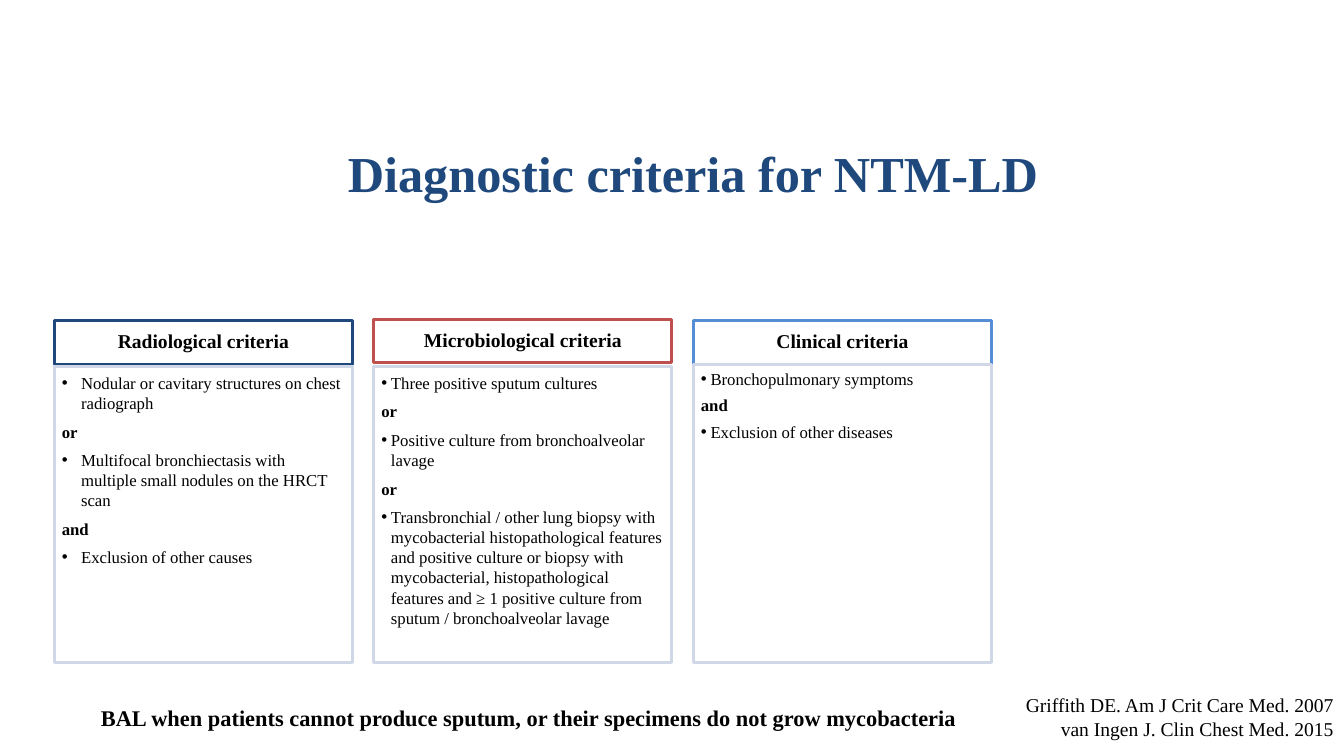
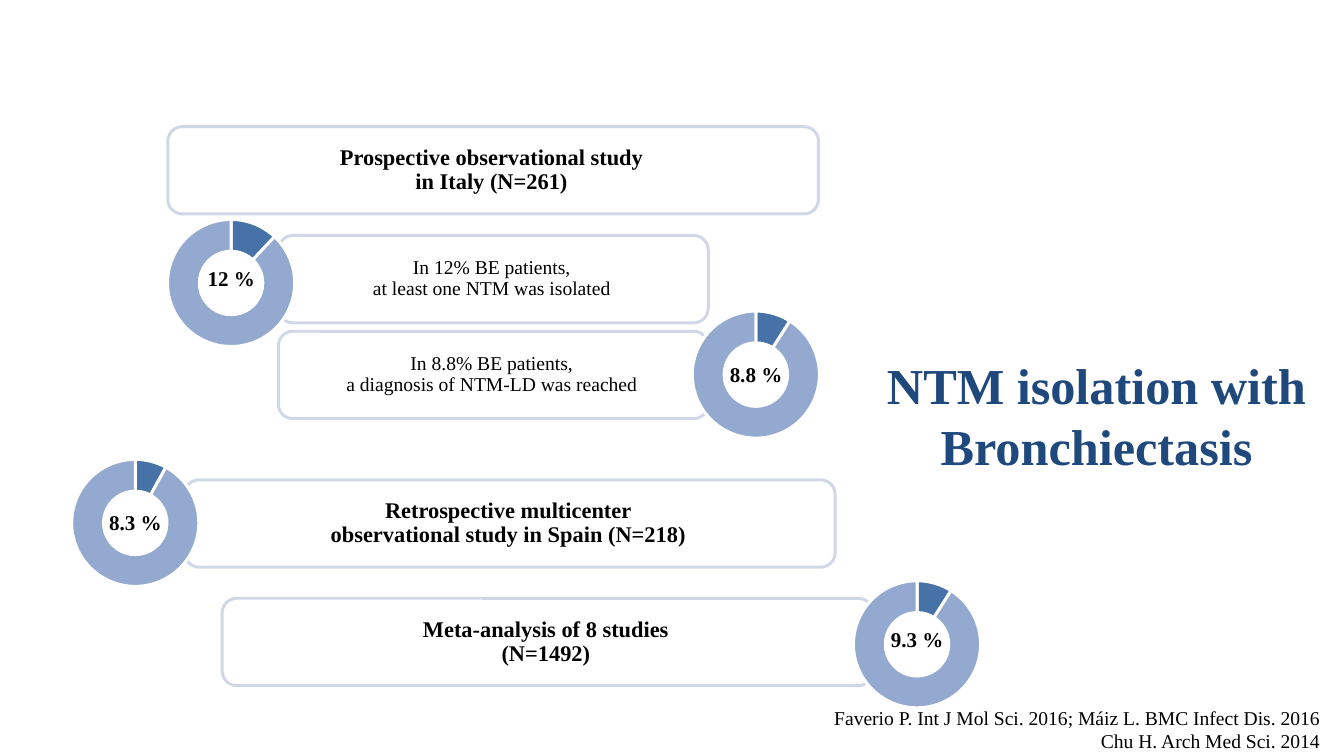
from lxml import etree
from pptx import Presentation
from pptx import util as u
from pptx.chart.data import CategoryChartData
from pptx.dml.color import RGBColor
from pptx.enum import chart as charts, shapes, text
from pptx.oxml import parse_xml
from pptx.oxml.ns import nsdecls, qn

# Shared look
NAVY = RGBColor(0x1F, 0x49, 0x7D)
RED = RGBColor(0xC0, 0x50, 0x4D)
SKY = RGBColor(0x55, 0x8E, 0xD5)
PALE = RGBColor(0xD0, 0xD8, 0xE8)
RING_DARK = RGBColor(0x46, 0x72, 0xA8)
RING_LIGHT = RGBColor(0x93, 0xA9, 0xCF)
BLACK = RGBColor(0, 0, 0)
WHITE = RGBColor(255, 255, 255)
FONT = "Times New Roman"
CENTER, RIGHT, LEFT = text.PP_ALIGN.CENTER, text.PP_ALIGN.RIGHT, text.PP_ALIGN.LEFT
TOP, MIDDLE, BOTTOM = text.MSO_ANCHOR.TOP, text.MSO_ANCHOR.MIDDLE, text.MSO_ANCHOR.BOTTOM
JOINERS = ("or", "and")


def write(box, lines, size, align=CENTER, anchor=MIDDLE, bold=False, color=BLACK,
          spacing=None, after=None, margins=None, indent=None):
    """Fill a box with paragraphs; an indent turns all but the joiners into bullets."""
    frame = box.text_frame
    frame.text = "\n".join(lines)
    settings = {"word_wrap": True, "auto_size": text.MSO_AUTO_SIZE.NONE,
                "vertical_anchor": anchor}
    if margins:
        sides = ("margin_left", "margin_top", "margin_right", "margin_bottom")
        settings.update(zip(sides, map(u.Pt, margins)))
    for name, value in settings.items():
        setattr(frame, name, value)
    for para in frame.paragraphs:
        joiner = indent is not None and para.text in JOINERS
        para.alignment = align
        if spacing:
            para.line_spacing = spacing
        if after:
            para.space_after = u.Pt(after)
        if indent and not joiner:
            props = para._p.get_or_add_pPr()
            props.set("marL", str(u.Pt(indent)))
            props.set("indent", str(-u.Pt(indent)))
            etree.SubElement(props, qn("a:buFont")).set("typeface", "Arial")
            etree.SubElement(props, qn("a:buChar")).set("char", "•")
        look = {"name": FONT, "size": u.Pt(size), "bold": bold or joiner}
        for span in para.runs:
            for name, value in look.items():
                setattr(span.font, name, value)
            span.font.color.rgb = color


def add_box(page, kind, place, line):
    box = page.shapes.add_shape(kind, *map(u.Pt, place))
    box.shadow.inherit = False
    box.fill.background()
    box.line.color.rgb = line
    box.line.width = u.Pt(2)
    return box


deck = Presentation()
deck.slide_width, deck.slide_height = u.Pt(907.2), u.Pt(510.5)

# Titles of both slides: place as left, top, width, height
titles = [
    ("Diagnostic criteria for NTM-LD", (150, 86.4, 635.8, 54)),
    ("NTM isolation with Bronchiectasis", (574.6, 229.7, 331.2, 95)),
]
pages = []
for title, place in titles:
    page = deck.slides.add_slide(deck.slide_layouts[5])
    heading = page.shapes.title
    for name, value in zip(("left", "top", "width", "height"), place):
        setattr(heading, name, u.Pt(value))
    write(heading, [title], 34, anchor=BOTTOM, bold=True, color=NAVY)
    pages.append(page)
criteria_page, studies_page = pages

# Slide 1: three columns of criteria
COLUMN_LEFT, COLUMN_STEP, COLUMN_WIDTH, COLUMN_BOTTOM = 36.7, 215.7, 201, 447.5
columns = [
    ("Radiological criteria", NAVY, 216.3, 247.3, 13, None, [
        "Nodular or cavitary structures on chest radiograph",
        "or",
        "Multifocal bronchiectasis with multiple small nodules on the HRCT scan",
        "and",
        "Exclusion of other causes"]),
    ("Microbiological criteria", RED, 215.5, 247.3, 6.5, None, [
        "Three positive sputum cultures",
        "or",
        "Positive culture from bronchoalveolar lavage",
        "or",
        "Transbronchial / other lung biopsy with mycobacterial histopathological "
        "features and positive culture or biopsy with mycobacterial, "
        "histopathological features and ≥ 1 positive culture from sputum / "
        "bronchoalveolar lavage"]),
    ("Clinical criteria", SKY, 216.3, 246.2, 6.5, 0.9, [
        "Bronchopulmonary symptoms",
        "and",
        "Exclusion of other diseases"]),
]
RECTANGLE = shapes.MSO_SHAPE.RECTANGLE
for index, (name, accent, top, body_top, indent, spacing, items) in enumerate(columns):
    left = COLUMN_LEFT + index * COLUMN_STEP
    header = add_box(criteria_page, RECTANGLE, (left, top, COLUMN_WIDTH, 29.6), accent)
    write(header, [name], 13.2, bold=True, spacing=0.9, margins=(5, 3, 5, 3))
    body = add_box(criteria_page, RECTANGLE,
                   (left, body_top, COLUMN_WIDTH, COLUMN_BOTTOM - body_top), PALE)
    write(body, items, 11.3, align=LEFT, anchor=TOP, spacing=spacing, after=5.7,
          margins=(5, 4.3, 5, 6), indent=indent)

# Slide 1: closing remark
remark = criteria_page.shapes.add_textbox(*map(u.Pt, (43.2, 470.5, 627, 28)))
write(remark, ["BAL when patients cannot produce sputum, or their specimens "
               "do not grow mycobacteria"], 15.1, bold=True)

# Slide 2: study boxes (left, top, width, is a main study, text)
studies = [
    (113.3, 85.5, 439.2, True, "Prospective observational study\vin Italy (N=261)"),
    (187.9, 159, 290.2, False, "In 12% BE patients,\vat least one NTM was isolated"),
    (187.9, 223.7, 290.2, False, "In 8.8% BE patients,\va diagnosis of NTM-LD was reached"),
    (124.6, 324, 439.2, True,
     "Retrospective multicenter\vobservational study in Spain (N=218)"),
    (150, 404, 439.2, True, "Meta-analysis of 8\u00a0studies\v(N=1492)"),
]
for left, top, width, main, wording in studies:
    study = add_box(studies_page, shapes.MSO_SHAPE.ROUNDED_RECTANGLE,
                    (left, top, width, 59), PALE)
    write(study, [wording], 15.1 if main else 13.2, bold=main, spacing=0.9,
          margins=(3.6, 3.6, 5.8, 3.6))

# Slide 2: rings with their share (left, top, label shift, value, label)
RING_WIDTH, RING_HEIGHT = 153, 107.3
LABEL_WIDTH, LABEL_HEIGHT = 85, 37
PLOT_HEIGHT = 0.8
PLOT_WIDTH = PLOT_HEIGHT * RING_HEIGHT / RING_WIDTH
rings = [
    (79.6, 137.5, -2, 12, "12\u00a0%"),
    (433.8, 199.4, 0.5, 9, "8.8\u00a0%"),
    (14.9, 299.5, 0.5, 8, "8.3\u00a0%"),
    (542.6, 381.5, -2.5, 9, "9.3\u00a0%"),
]
for left, top, shift, value, wording in rings:
    data = CategoryChartData()
    data.categories = ["1", "2"]
    data.add_series("Series 1", (value, 100 - value))
    chart = studies_page.shapes.add_chart(
        charts.XL_CHART_TYPE.DOUGHNUT,
        *map(u.Pt, (left, top, RING_WIDTH, RING_HEIGHT)), data).chart
    chart.has_title = chart.has_legend = False
    chart.font.name, chart.font.size = "Calibri", u.Pt(10)
    chart.font.color.rgb = BLACK
    plot = chart.plots[0]
    plot.vary_by_categories = True
    plot.has_data_labels = False
    for index, color in enumerate((RING_DARK, RING_LIGHT)):
        part = plot.series[0].points[index].format
        part.fill.solid()
        part.fill.fore_color.rgb = color
        part.line.color.rgb = WHITE
        part.line.width = u.Pt(2)

    # Hole size and a centred plot area
    area = chart._chartSpace.find(".//" + qn("c:plotArea"))
    area.find(".//" + qn("c:holeSize")).set("val", "65")
    for old in area.findall(qn("c:layout")):
        area.remove(old)
    sizes = {"x": (1 - PLOT_WIDTH) / 2, "y": (1 - PLOT_HEIGHT) / 2,
             "w": PLOT_WIDTH, "h": PLOT_HEIGHT}
    modes = '<c:layoutTarget val="inner"/><c:xMode val="edge"/><c:yMode val="edge"/>'
    values = "".join(f'<c:{key} val="{size:.3f}"/>' for key, size in sizes.items())
    area.insert(0, parse_xml(f'<c:layout {nsdecls("c")}><c:manualLayout>'
                             f'{modes}{values}</c:manualLayout></c:layout>'))

    label = studies_page.shapes.add_textbox(
        u.Pt(left + (RING_WIDTH - LABEL_WIDTH) / 2),
        u.Pt(top + (RING_HEIGHT - LABEL_HEIGHT) / 2 + shift),
        u.Pt(LABEL_WIDTH), u.Pt(LABEL_HEIGHT))
    write(label, [wording], 14.2, bold=True, spacing=0.9, margins=(7, 5, 7, 5))

# Sources of both slides, in front of the rings: left, top and bottom margin
sources = [
    (criteria_page, 547.2, 463.3, 3.6,
     ["Griffith DE. Am J Crit Care Med. 2007", "van Ingen J. Clin Chest Med. 2015"]),
    (studies_page, 538, 470.5, 2.4,
     ["Faverio P. Int J Mol Sci. 2016; Máiz L. BMC Infect Dis. 2016",
      "Chu H. Arch Med Sci. 2014"]),
]
for page, left, top, bottom_margin, lines in sources:
    source = page.shapes.add_textbox(*map(u.Pt, (left, top, 360, 40)))
    write(source, lines, 13.2, align=RIGHT, anchor=BOTTOM,
          margins=(7.2, 3.6, 7.2, bottom_margin))

deck.save("out.pptx")
